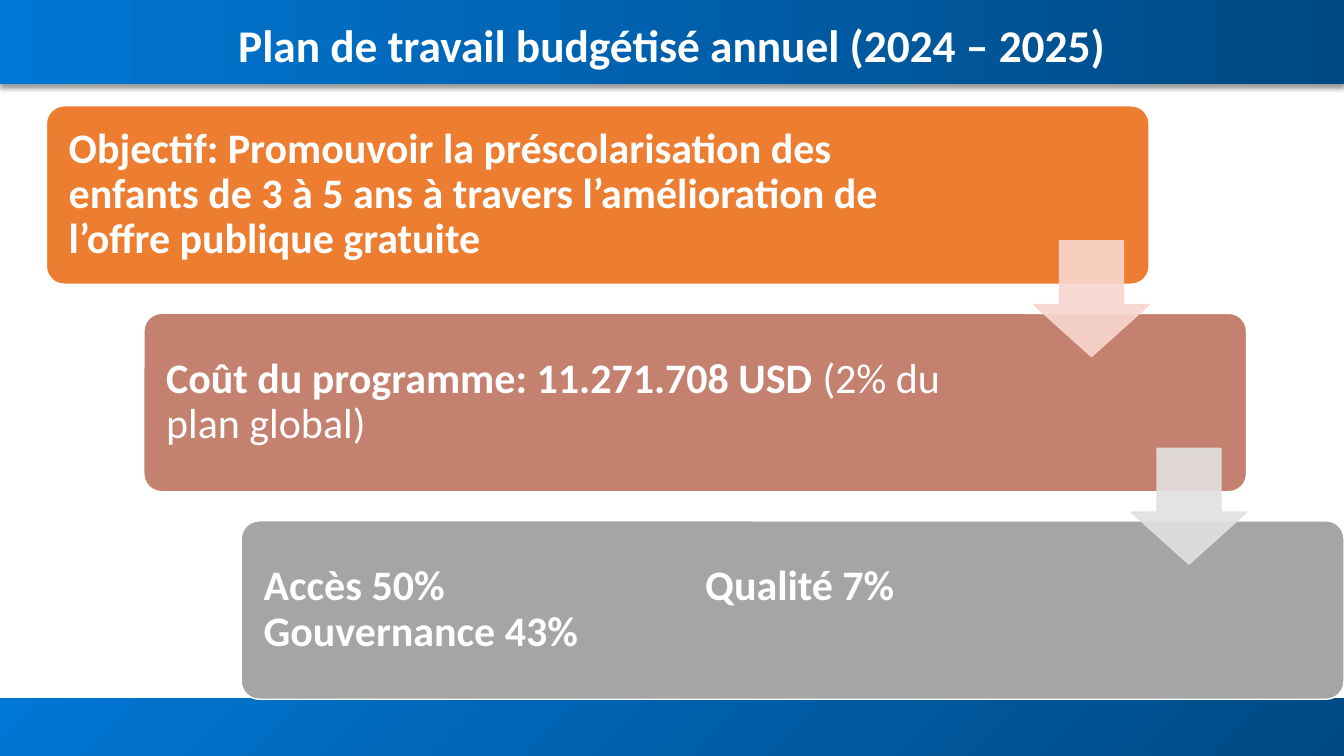
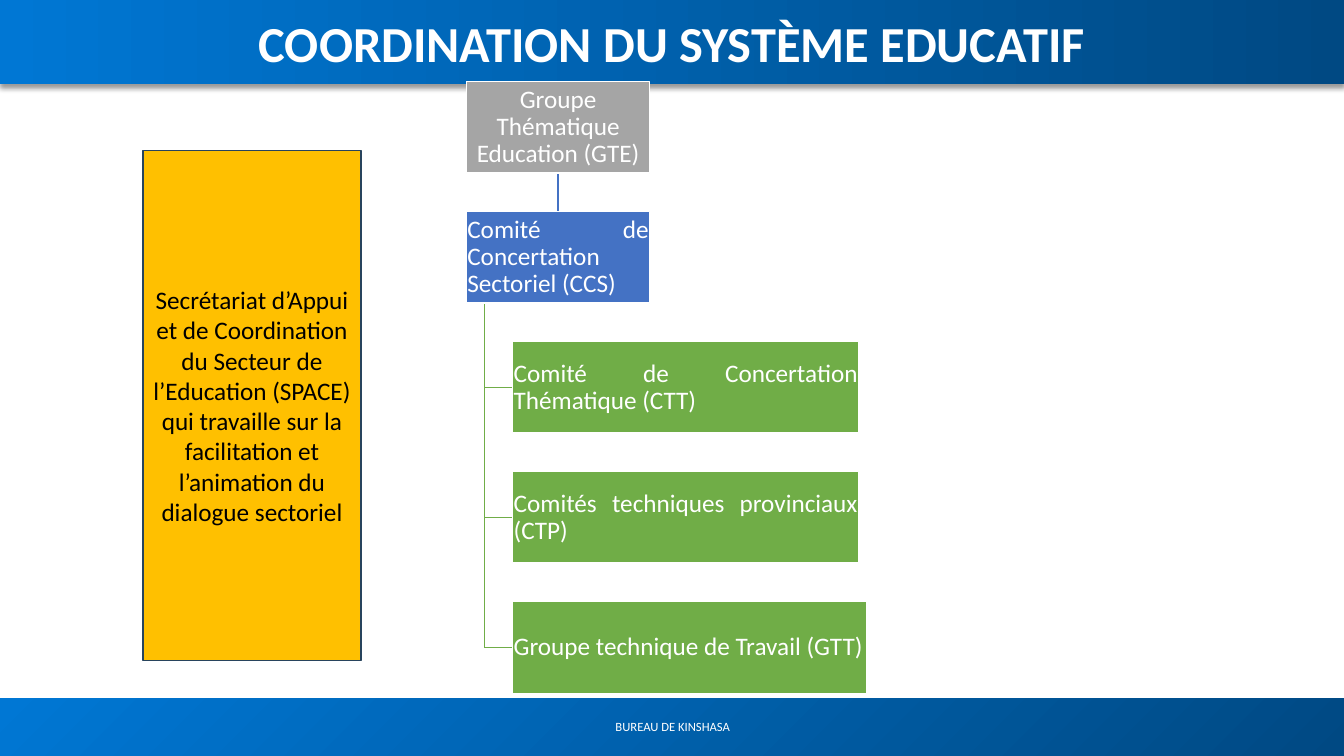
from lxml import etree
from pptx import Presentation
from pptx import util as u
from pptx.dml.color import RGBColor
from pptx.enum import shapes, text
from pptx.oxml import ns

FONT = "Calibri"
WHITE = RGBColor(0xFF, 0xFF, 0xFF)
BLACK = RGBColor(0x00, 0x00, 0x00)
SKY = RGBColor(0x00, 0x77, 0xD4)
NAVY = RGBColor(0x00, 0x49, 0x83)
ORANGE = RGBColor(0xED, 0x7D, 0x31)
BRICK = RGBColor(0xC4, 0x81, 0x70)
GREY = RGBColor(0xA5, 0xA5, 0xA5)
BLUE = RGBColor(0x44, 0x72, 0xC4)
GREEN = RGBColor(0x70, 0xAD, 0x47)
GOLD = RGBColor(0xFF, 0xC0, 0x00)
SLATE = RGBColor(0x28, 0x44, 0x5D)
PINK = RGBColor(0xF8, 0xD7, 0xCE)
SILVER = RGBColor(0xE1, 0xE1, 0xE1)

WIDTH, HEIGHT = u.Inches(13.33), u.Inches(7.5)
SHAPE = shapes.MSO_SHAPE
ALIGN = text.PP_ALIGN
ANCHOR = text.MSO_ANCHOR


def place(x, y, *size):
    """Turn percentages of the slide's width and height into lengths."""
    sides = (WIDTH, HEIGHT, WIDTH, HEIGHT)
    return [u.Emu(round(side * share / 100)) for side, share in zip(sides, (x, y, *size))]


def add_xml(parent, tag, **attributes):
    return etree.SubElement(parent, ns.qn(tag), attributes)


def write(sp, runs, size=18, color=WHITE, align=ALIGN.LEFT, anchor=ANCHOR.MIDDLE,
          margins=(0, 0, 0, 0), spacing=0.9, tab=None):
    """Fill one paragraph with (wording, bold) runs; margins and tab are in inches."""
    tf = sp.text_frame
    tf.word_wrap = True
    tf.vertical_anchor = anchor
    tf.margin_left, tf.margin_top, tf.margin_right, tf.margin_bottom = map(u.Inches, margins)
    p = tf.paragraphs[0]
    p.alignment = align
    p.line_spacing = spacing
    if tab:
        stops = add_xml(p._p.get_or_add_pPr(), "a:tabLst")
        add_xml(stops, "a:tab", pos=str(u.Inches(tab)), algn="l")
    for wording, bold in runs:
        r = p.add_run()
        r.text = wording
        r.font.name, r.font.size, r.font.bold = FONT, u.Pt(size), bold
        r.font.color.rgb = color


def add_label(slide, box, wording, bold=False, **style):
    write(slide.shapes.add_textbox(*place(*box)), [(wording, bold)], **style)


def add_block(slide, kind, box, fill, line=WHITE, adjustments=()):
    sp = slide.shapes.add_shape(kind, *place(*box))
    sp.shadow.inherit = False
    sp.fill.solid()
    sp.fill.fore_color.rgb = fill
    sp.line.color.rgb = line
    sp.line.width = u.Pt(1)
    for i, value in enumerate(adjustments):
        sp.adjustments[i] = value
    return sp


def add_band(slide, box, colors, angle):
    sp = slide.shapes.add_shape(SHAPE.RECTANGLE, *place(*box))
    sp.shadow.inherit = False
    sp.line.fill.background()
    sp.fill.gradient()
    sp.fill.gradient_angle = angle
    for stop, color in zip(sp.fill.gradient_stops, colors):
        stop.color.rgb = color
    return sp


def add_line(slide, start, end, color):
    line = slide.shapes.add_connector(shapes.MSO_CONNECTOR.STRAIGHT, *place(*start), *place(*end))
    line.line.color.rgb = color
    line.line.width = u.Pt(1)
    add_xml(line._element.spPr, "a:effectLst")


def add_slide(prs, title, size, title_box):
    slide = prs.slides.add_slide(prs.slide_layouts[6])
    add_band(slide, (0, 92.4, 100, 7.6), (NAVY, SKY), 135)
    header = add_band(slide, (0, 0, 100, 11.1), (SKY, NAVY), 0)
    effects = header._element.spPr.find(ns.qn("a:effectLst"))
    shadow = add_xml(effects, "a:outerShdw", blurRad=str(u.Pt(4)), dist=str(u.Pt(3)),
                     dir="5400000", algn="t", rotWithShape="0")
    add_xml(add_xml(shadow, "a:srgbClr", val=str(BLACK)), "a:alpha", val="40000")
    add_label(slide, title_box, title, bold=True, size=size, align=ALIGN.CENTER, spacing=1.07)
    return slide


def add_arrow(slide, box, color):
    arrow = add_block(slide, SHAPE.DOWN_ARROW, box, color, color, (0.55, 0.45))
    for rgb in arrow._element.spPr.iter(ns.qn("a:srgbClr")):
        add_xml(rgb, "a:alpha", val="90000")


def build_plan(prs):
    slide = add_slide(prs, "Plan de travail budgétisé annuel (2024 – 2025)", 32.4,
                      (3.45, 2.27, 93.1, 6.67))
    steps = [
        (ORANGE, 1.97, None, [("Objectif: Promouvoir la préscolarisation des enfants de 3 à 5 ans "
                               "à travers l’amélioration de l’offre publique gratuite", True)]),
        (BRICK, 2.29, None, [("Coût du programme: 11.271.708 USD ", True),
                             ("(2% du plan global)", False)]),
        (GREY, 2.29, 4.38, [("Accès 50%\tQualité 7%\tGouvernance 43%", True)]),
    ]
    shift, drop = 7.25, 27.45
    for i, (fill, right, tab, runs) in enumerate(steps):
        sp = add_block(slide, SHAPE.ROUNDED_RECTANGLE,
                       (3.45 + i * shift, 14 + i * drop, 82.05, 23.6), fill, adjustments=(0.1,))
        write(sp, runs, size=30, margins=(0.17, 0.12, right, 0.12), tab=tab)
    for i, color in enumerate((PINK, SILVER)):
        add_arrow(slide, (76.9 + i * shift, 31.85 + i * drop, 8.63, 15.33), color)


def build_coordination(prs):
    slide = add_slide(prs, "COORDINATION DU SYSTÈME EDUCATIF", 36, (0, 0, 100, 10.7))
    add_label(slide, (36.7, 94.67, 26.7, 3.2), "BUREAU DE KINSHASA", size=9, align=ALIGN.CENTER,
              anchor=ANCHOR.TOP, margins=(0.1, 0.05, 0.1, 0.05))

    head_x, member_x, trunk_x = 34.7, 38.15, 36.05
    head_w, member_w, box_h = 13.65, 25.75, 12.1
    tops = [10.8 + 17.2 * row for row in range(5)]
    middles = [top + box_h / 2 for top in tops]
    center_x = head_x + head_w / 2

    add_line(slide, (trunk_x, tops[1] + box_h), (trunk_x, middles[-1]), GREEN)
    for y in middles[2:]:
        add_line(slide, (trunk_x, y), (member_x, y), GREEN)
    add_line(slide, (center_x, tops[0] + box_h), (center_x, tops[1]), BLUE)

    groups = [
        ("Groupe Thématique Education (GTE)", head_x, head_w, GREY, ALIGN.CENTER),
        ("Comité de Concertation Sectoriel (CCS)", head_x, head_w, BLUE, ALIGN.JUSTIFY),
        ("Comité de Concertation Thématique (CTT)", member_x, member_w, GREEN, ALIGN.JUSTIFY),
        ("Comités techniques provinciaux (CTP)", member_x, member_w, GREEN, ALIGN.JUSTIFY),
        ("Groupe technique de Travail (GTT)", member_x, 26.35, GREEN, ALIGN.JUSTIFY),
    ]
    for top, (name, x, width, fill, align) in zip(tops, groups):
        sp = add_block(slide, SHAPE.RECTANGLE, (x, top, width, box_h), fill)
        write(sp, [(name, False)], align=align, margins=(0.01,) * 4)

    secretariat = add_block(slide, SHAPE.RECTANGLE, (10.65, 19.87, 16.2, 67.5), GOLD, SLATE)
    write(secretariat, [("Secrétariat d’Appui et de Coordination du Secteur de l’Education (SPACE) "
                         "qui travaille sur la facilitation et l’animation du dialogue sectoriel",
                         False)],
          color=BLACK, align=ALIGN.CENTER, margins=(0.1, 0.05, 0.1, 0.05), spacing=1.0)


def main():
    prs = Presentation()
    prs.slide_width, prs.slide_height = WIDTH, HEIGHT
    build_plan(prs)
    build_coordination(prs)
    prs.save("out.pptx")


if __name__ == "__main__":
    main()
